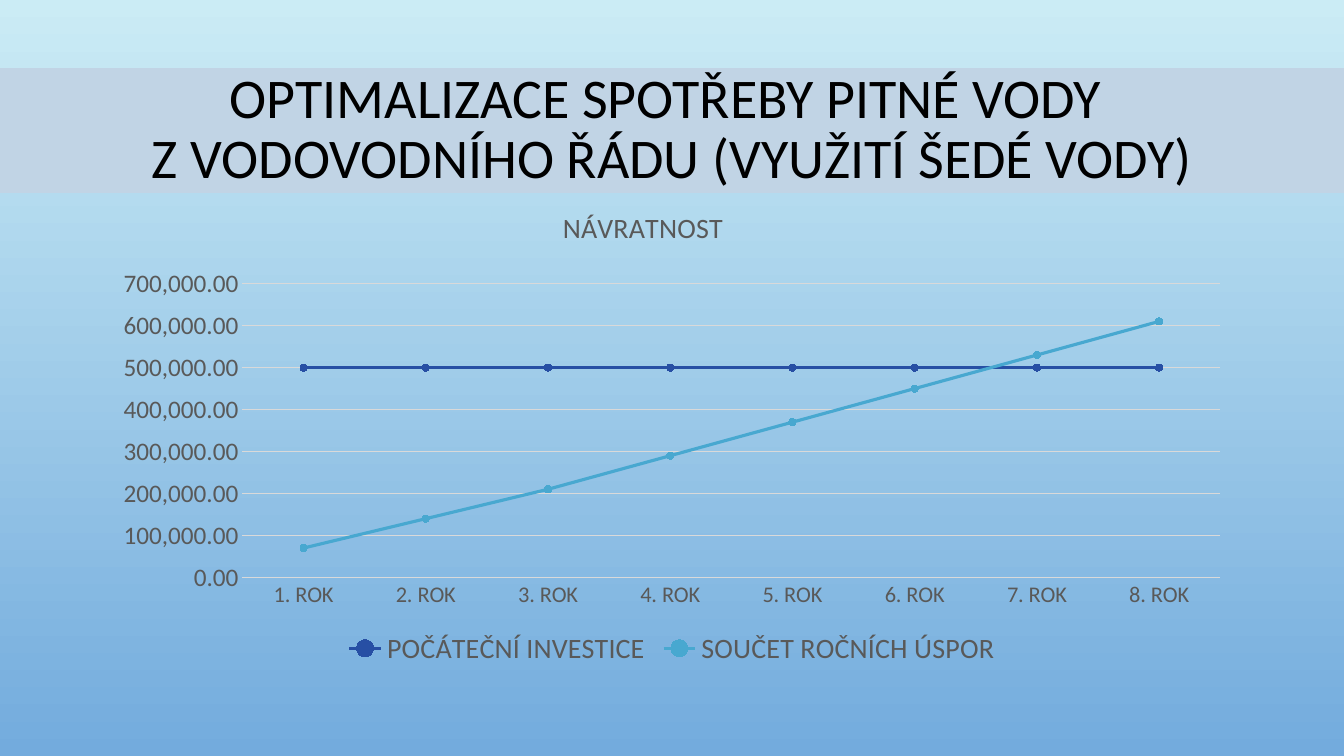
import pptx
import pptx.chart.data
import pptx.dml.color
import pptx.enum.chart
import pptx.enum.shapes
import pptx.enum.text
import pptx.oxml
import pptx.oxml.ns
import pptx.util

Pt = pptx.util.Pt
qn = pptx.oxml.ns.qn
kinds = pptx.enum.chart


def tint(code):
    return pptx.dml.color.RGBColor.from_string(code)


def place(node, index, **shares):
    old = node.find(qn("c:layout"))
    if old is not None:
        node.remove(old)
    parts = "".join(f'<c:{key} val="{val}"/>' for key, val in shares.items())
    node.insert(index, pptx.oxml.parse_xml(
        f'<c:layout {pptx.oxml.ns.nsdecls("c")}><c:manualLayout>'
        f'{parts}</c:manualLayout></c:layout>'))


deck = pptx.Presentation()
deck.slide_width = pptx.util.Inches(13.33)
deck.slide_height = pptx.util.Inches(7.5)
wide, high = deck.slide_width, deck.slide_height
slide = deck.slides.add_slide(deck.slide_layouts[6])

back = slide.background.fill
back.gradient()
back.gradient_angle = 270
for stop, code in zip(back.gradient_stops, ("CBECF5", "73ABDD")):
    stop.color.rgb = tint(code)

band = slide.shapes.add_shape(
    pptx.enum.shapes.MSO_SHAPE.RECTANGLE,
    0, int(high * 0.09), wide, int(high * 0.165))
band.shadow.inherit = False
band.fill.solid()
band.fill.fore_color.rgb = tint("C1D4E5")
band.line.fill.background()
frame = band.text_frame
frame.word_wrap = True
frame.vertical_anchor = pptx.enum.text.MSO_ANCHOR.MIDDLE
frame.text = ("OPTIMALIZACE SPOTŘEBY PITNÉ VODY \v"
              "Z VODOVODNÍHO ŘÁDU (VYUŽITÍ ŠEDÉ VODY)")
head = frame.paragraphs[0]
head.alignment = pptx.enum.text.PP_ALIGN.CENTER
head.line_spacing = 0.9
head.font.name = "Calibri"
head.font.size = Pt(40)
head.font.color.rgb = tint("000000")

data = pptx.chart.data.CategoryChartData(number_format="#,##0.00")
data.categories = [f"{year}. ROK" for year in range(1, 9)]
data.add_series("POČÁTEČNÍ INVESTICE", [500000] * 8)
data.add_series("SOUČET ROČNÍCH ÚSPOR", [
    70000, 140000, 210000, 290000, 370000, 450000, 530000, 610000])
chart = slide.shapes.add_chart(
    kinds.XL_CHART_TYPE.LINE_MARKERS,
    int(wide * 0.075), int(high * 0.255),
    int(wide * 0.85), int(high * 0.633), data).chart
chart.font.name = "Calibri"
chart.font.size = Pt(10)

chart.has_title = True
label = chart.chart_title.text_frame
label.text = "NÁVRATNOST"
name = label.paragraphs[0].font
name.bold = False
chart.has_legend = True
chart.legend.position = kinds.XL_LEGEND_POSITION.BOTTOM
chart.legend.include_in_layout = False

years, costs = chart.category_axis, chart.value_axis
costs.minimum_scale = 0
costs.maximum_scale = 700000
costs.major_unit = 100000
costs.tick_labels.number_format = "#,##0.00"
costs.tick_labels.number_format_is_linked = False
costs.has_major_gridlines = True
costs.format.line.fill.background()
for axis in (years, costs):
    axis.major_tick_mark = kinds.XL_TICK_MARK.NONE
    axis.minor_tick_mark = kinds.XL_TICK_MARK.NONE
for part in (years, costs.major_gridlines):
    part.format.line.color.rgb = tint("D9D9D9")
    part.format.line.width = Pt(0.75)

for font, size in ((name, 20), (chart.legend.font, 20),
                   (years.tick_labels.font, 16),
                   (costs.tick_labels.font, 18)):
    font.name = "Calibri"
    font.size = Pt(size)
    font.color.rgb = tint("595959")

plot = chart.plots[0]
plot.vary_by_categories = False
for row, code in zip(plot.series, ("274FA4", "48A8D0")):
    row.smooth = False
    row.format.line.color.rgb = tint(code)
    row.format.line.width = Pt(2.25)
    mark = row.marker
    mark.style = kinds.XL_MARKER_STYLE.CIRCLE
    mark.size = 5
    mark.format.fill.solid()
    mark.format.fill.fore_color.rgb = tint(code)
    mark.format.line.color.rgb = tint(code)

root = chart.element
place(root.find(".//" + qn("c:title")), 1,
      xMode="edge", yMode="edge", x=0.4, y=0.02)
place(root.find(".//" + qn("c:plotArea")), 0,
      layoutTarget="inner", xMode="edge", yMode="edge",
      x=0.124, y=0.19, w=0.856, h=0.614)

deck.save("out.pptx")
